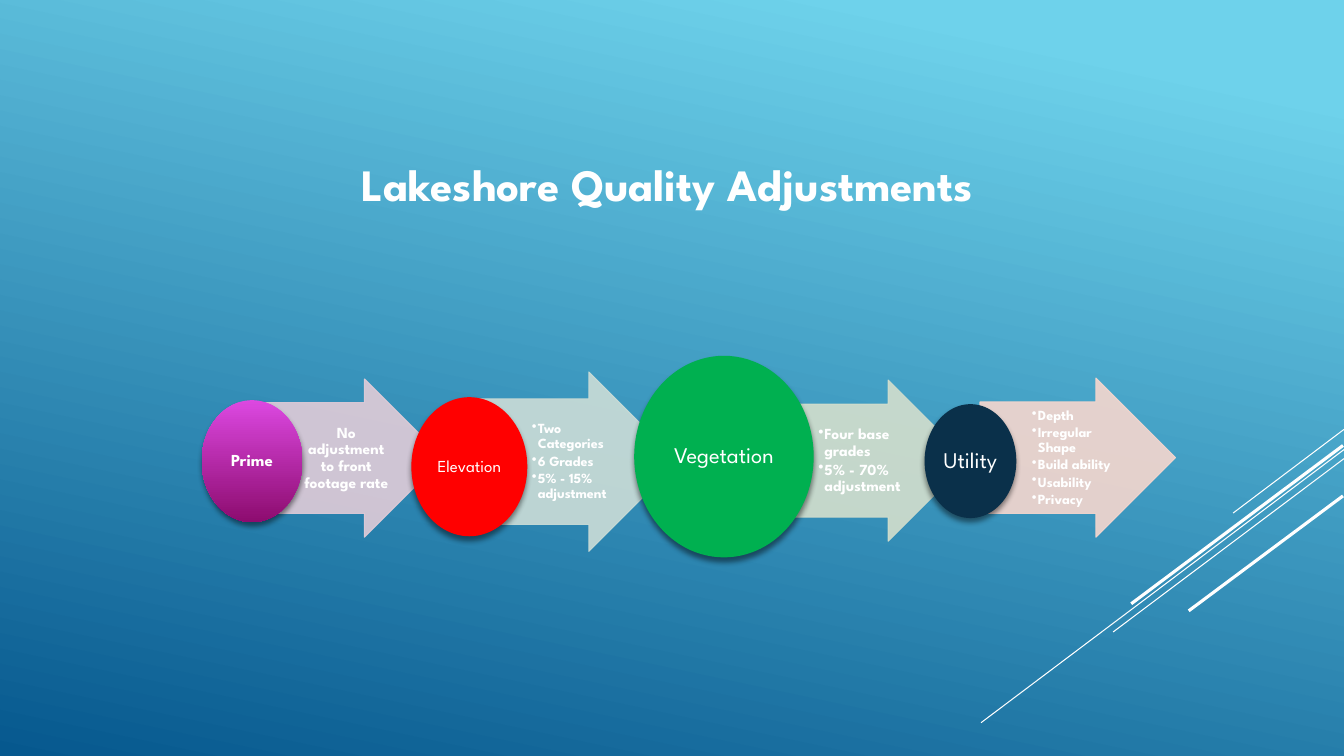
import pptx
import pptx.util
import pptx.dml.color
import pptx.enum.shapes
import pptx.enum.text
import pptx.oxml
import pptx.oxml.ns
import lxml.etree

Inches = pptx.util.Inches
Pt = pptx.util.Pt
Kind = pptx.enum.shapes.MSO_SHAPE
Align = pptx.enum.text.PP_ALIGN
Anchor = pptx.enum.text.MSO_ANCHOR
qn = pptx.oxml.ns.qn

COLORS = {
    "white": "FFFFFF", "black": "000000", "sky": "6ED2EB", "deep": "06588E",
    "mauve": "E1CCD8", "mist": "CCDDD7", "sage": "D4DFCD", "peach": "F6D7CE",
    "pink": "DC48E1", "plum": "8D0C6F", "red": "FF0000", "green": "00B050",
    "navy": "0A304A",
}


def paint(fill, names, angle=0, stops=(0, 1)):
    """Fill with one colour, or with a gradient when two are named."""
    tones = [pptx.dml.color.RGBColor.from_string(COLORS[n]) for n in names]
    if len(tones) == 1:
        fill.solid()
        fill.fore_color.rgb = tones[0]
        return
    fill.gradient()
    fill.gradient_angle = angle
    for stop, tone, place in zip(fill.gradient_stops, tones, stops):
        stop.color.rgb = tone
        stop.position = place


def write(frame, lines, size, bold, bullets=False):
    frame.text = "\n".join(lines)
    frame.word_wrap = True
    frame.vertical_anchor = Anchor.MIDDLE
    frame.margin_left = Inches(0.03 if bullets else 0.01)
    frame.margin_right = frame.margin_top = frame.margin_bottom = Inches(0.01)
    for para in frame.paragraphs:
        para.alignment = Align.LEFT if bullets else Align.CENTER
        para.line_spacing = 0.9
        font = para.runs[0].font
        font.name, font.size, font.bold = "League Spartan", Pt(size), bold
        paint(font.fill, ["white"])
        if bullets:
            para.space_after = Pt(size * 0.15)
            props = para._p.get_or_add_pPr()
            props.set("marL", str(Inches(0.06)))
            props.set("indent", str(Inches(-0.06)))
            lxml.etree.SubElement(props, qn("a:buChar")).set("char", "•")


deck = pptx.Presentation()
deck.slide_width, deck.slide_height = Inches(13.33), Inches(7.5)
slide = deck.slides.add_slide(deck.slide_layouts[5])
shapes = slide.shapes
paint(slide.background.fill, ["sky", "deep"], 258, (0.1, 1))

# Diagonal lines in the corner: start, end, width
streaks = [
    (13.33, 4.26, 12.23, 5.09, 0.75),
    (13.33, 4.46, 9.73, 7.17, 0.75),
    (13.33, 4.55, 11.04, 6.27, 0.75),
    (13.32, 4.42, 11.22, 5.99, 2.25),
    (13.32, 4.92, 11.79, 6.06, 2.25),
]
for *ends, width in streaks:
    streak = shapes.add_connector(
        pptx.enum.shapes.MSO_CONNECTOR.STRAIGHT, *map(Inches, ends))
    paint(streak.line.fill, ["white"])
    streak.line.width = Pt(width)
    lxml.etree.SubElement(streak.element.spPr, qn("a:effectLst"))

title = shapes.title
title.left, title.top = Inches(3.17), Inches(1.5)
title.width, title.height = Inches(6.9), Inches(0.64)
write(title.text_frame, ["Lakeshore Quality Adjustments"], 32, True)
title.text_frame.paragraphs[0].line_spacing = 1
title.text_frame.margin_top = Inches(0.05)
title.text_frame.vertical_anchor = Anchor.TOP
title.text_frame.word_wrap = False
title.text_frame.auto_size = pptx.enum.text.MSO_AUTO_SIZE.NONE

# Arrow box, tone, notes, note size; disc box, tones, label, label size
stages = [
    ((2.49, 3.76, 1.91, 1.57), "mauve",
     ["No adjustment to front footage rate"], 11,
     (2, 3.97, 1, 1.21), ["pink", "plum"], "Prime", 12),
    ((4.75, 3.69, 1.98, 1.78), "mist",
     ["Two Categories", "6 Grades", "5% - 15% adjustment"], 10,
     (4.08, 3.94, 1.15, 1.38), ["red"], "Elevation", 12),
    ((7.58, 3.77, 2.03, 1.6), "sage",
     ["Four base grades", "5% - 70% adjustment"], 11,
     (6.29, 3.53, 1.78, 2), ["green"], "Vegetation", 16),
    ((9.72, 3.75, 1.94, 1.58), "peach",
     ["Depth", "Irregular Shape", "Build ability", "Usability", "Privacy"], 10,
     (9.17, 4.01, 0.91, 1.13), ["navy"], "Utility", 16),
]
for box, tone, notes, small, ring, tones, label, size in stages:
    arrow = shapes.add_shape(Kind.RIGHT_ARROW, *map(Inches, box))
    arrow.adjustments[0], arrow.adjustments[1] = 0.7, 0.5
    arrow.shadow.inherit = False
    paint(arrow.fill, [tone])
    paint(arrow.line.fill, [tone])
    arrow.line.width = Pt(0.75)
    for color in arrow.element.spPr.iter(qn("a:srgbClr")):
        lxml.etree.SubElement(color, qn("a:alpha")).set("val", "90000")

    left, top, wide, high = box
    note = shapes.add_textbox(
        Inches(left + wide / 4), Inches(top + high * 0.15),
        Inches(wide * 0.49), Inches(high * 0.7))
    write(note.text_frame, notes, small, True, len(notes) > 1)

    disc = shapes.add_shape(Kind.OVAL, *map(Inches, ring))
    paint(disc.fill, tones, 270)
    disc.line.fill.background()
    disc.shadow.inherit = False
    effects = disc.element.spPr.find(qn("a:effectLst"))
    shade = lxml.etree.SubElement(
        effects, qn("a:outerShdw"), blurRad=str(Pt(4)), dist=str(Pt(3)),
        dir="5400000", rotWithShape="0")
    color = lxml.etree.SubElement(shade, qn("a:srgbClr"), val=COLORS["black"])
    lxml.etree.SubElement(color, qn("a:alpha"), val="46000")
    write(disc.text_frame, [label], size, label == "Prime")

deck.save("out.pptx")
